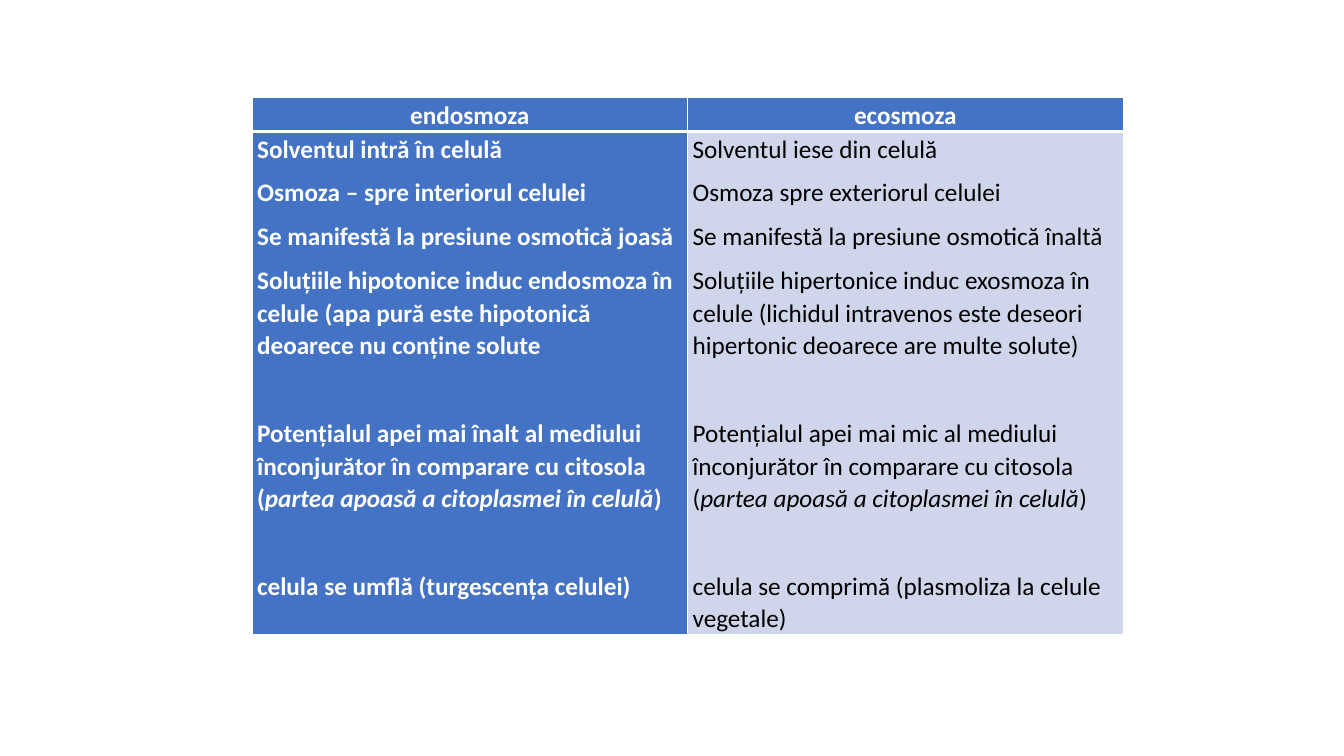
"""Build a slide with a table comparing endosmosis and exosmosis."""
from dataclasses import dataclass

from lxml.etree import SubElement
from pptx import Presentation
from pptx.dml.color import RGBColor
from pptx.enum.text import PP_ALIGN as Align
from pptx.oxml.ns import qn
from pptx.table import _Cell as Cell
from pptx.util import Inches, Pt

WHITE = RGBColor(0xFF, 0xFF, 0xFF)
BLACK = RGBColor(0x00, 0x00, 0x00)
BLUE = RGBColor(0x44, 0x72, 0xC4)
LAVENDER = RGBColor(0xCF, 0xD5, 0xEA)

MARGINS = {
    "margin_left": Inches(0.05),
    "margin_right": Inches(0.05),
    "margin_top": Inches(0.01),
    "margin_bottom": Inches(0),
}
SPACING = {"line_spacing": 1.06, "space_after": Pt(8)}
LETTERING = {"name": "Calibri", "size": Pt(18)}
SECTION_GAP = Pt(31.4)
CYTOSOL = "partea apoasă a citoplasmei în celulă"


@dataclass(frozen=True)
class Statement:
    """One paragraph, with an optional italic gloss in brackets."""

    text: str
    gloss: str = ""
    opens_section: bool = False


@dataclass(frozen=True)
class Process:
    """One column of the comparison."""

    heading: str
    statements: tuple[Statement, ...]
    fill: RGBColor
    ink: RGBColor
    bold: bool


PROCESSES = (
    Process("endosmoza", (
        Statement("Solventul intră în celulă"),
        Statement("Osmoza – spre interiorul celulei"),
        Statement("Se manifestă la presiune osmotică joasă"),
        Statement("Soluțiile hipotonice induc endosmoza în celule (apa pură "
                  "este hipotonică deoarece nu conține solute"),
        Statement("Potențialul apei mai înalt al mediului înconjurător în "
                  "comparare cu citosola", CYTOSOL, True),
        Statement("celula se umflă (turgescența celulei)", opens_section=True),
    ), BLUE, WHITE, True),
    Process("ecosmoza", (
        Statement("Solventul iese din celulă"),
        Statement("Osmoza spre exteriorul celulei"),
        Statement("Se manifestă la presiune osmotică înaltă"),
        Statement("Soluțiile hipertonice induc exosmoza în celule (lichidul "
                  "intravenos este deseori hipertonic deoarece are multe solute)"),
        Statement("Potențialul apei mai mic al mediului înconjurător în "
                  "comparare cu citosola", CYTOSOL, True),
        Statement("celula se comprimă (plasmoliza la celule vegetale)",
                  opens_section=True),
    ), LAVENDER, BLACK, False),
)


def apply_format(target: object, values: dict[str, object]) -> None:
    """Set each named attribute on the target."""
    for name, value in values.items():
        setattr(target, name, value)


def add_borders(cell: Cell, bottom: float) -> None:
    """Draw white borders, with the bottom width given in points."""
    properties = cell._tc.get_or_add_tcPr()
    for side, width in {"L": 1, "R": 1, "T": 1, "B": bottom}.items():
        border = SubElement(properties, qn(f"a:ln{side}"), w=str(Pt(width)))
        paint = SubElement(border, qn("a:solidFill"))
        SubElement(paint, qn("a:srgbClr"), val=str(WHITE))


def fill_cell(cell: Cell, statements: tuple[Statement, ...], fill: RGBColor,
              ink: RGBColor, bold: bool, align: Align, bottom: float) -> None:
    """Format one cell and write its statements."""
    add_borders(cell, bottom)
    cell.fill.solid()
    cell.fill.fore_color.rgb = fill
    apply_format(cell, MARGINS)
    for index, statement in enumerate(statements):
        frame = cell.text_frame
        paragraph = frame.add_paragraph() if index else frame.paragraphs[0]
        apply_format(paragraph, SPACING | {"alignment": align})
        if statement.opens_section:
            paragraph.space_before = SECTION_GAP
        pieces = [(statement.text, False)]
        if statement.gloss:
            pieces = [(f"{statement.text} (", False), (statement.gloss, True), (")", False)]
        for words, italic in pieces:
            run = paragraph.add_run()
            run.text = words
            apply_format(run.font, LETTERING | {"bold": bold, "italic": italic})
            run.font.color.rgb = ink


def main() -> None:
    """Create the slide and save it."""
    deck = Presentation()
    apply_format(deck, {"slide_width": Inches(13.33), "slide_height": Inches(7.5)})
    slide = deck.slides.add_slide(deck.slide_layouts[6])
    comparison = slide.shapes.add_table(
        2, len(PROCESSES), Inches(2.5), Inches(0.97), Inches(8.64), Inches(5.23)).table
    apply_format(comparison, {"first_row": False, "horz_banding": False})
    for row, height in zip(comparison.rows, (0.29, 4.94)):
        row.height = Inches(height)
    for column, process in enumerate(PROCESSES):
        fill_cell(comparison.cell(0, column), (Statement(process.heading),),
                  BLUE, WHITE, True, Align.CENTER, 3)
        fill_cell(comparison.cell(1, column), process.statements,
                  process.fill, process.ink, process.bold, Align.LEFT, 1)
    deck.save("out.pptx")


if __name__ == "__main__":
    main()
